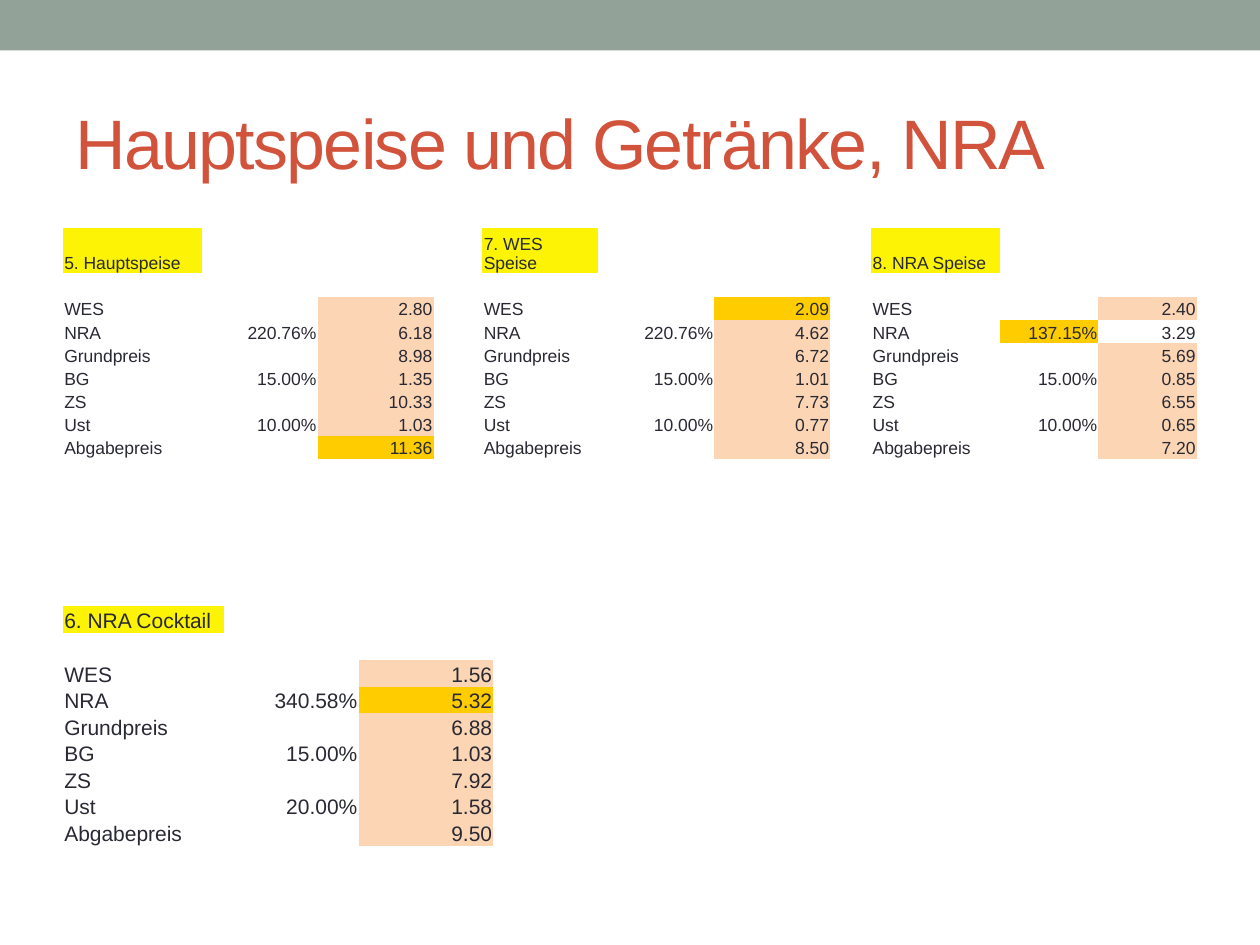
from pptx import Presentation
from pptx.dml.color import RGBColor
from pptx.enum.shapes import MSO_SHAPE
from pptx.enum.text import MSO_ANCHOR, PP_ALIGN
from pptx.util import Pt

RECTANGLE = MSO_SHAPE.RECTANGLE
BOTTOM, MIDDLE = MSO_ANCHOR.BOTTOM, MSO_ANCHOR.MIDDLE
LEFT, RIGHT = PP_ALIGN.LEFT, PP_ALIGN.RIGHT

SAGE = RGBColor(0x93, 0xA2, 0x99)
RED = RGBColor(0xD2, 0x53, 0x3C)
INK = RGBColor(0x29, 0x29, 0x34)
YELLOW = RGBColor(0xFC, 0xF3, 0x05)
PEACH = RGBColor(0xFC, 0xD5, 0xB4)
GOLD = RGBColor(0xFF, 0xCC, 0x00)

FONT = "Arial"
PLAIN_TABLE_STYLE = "{2D5ABB26-0587-4C30-8999-92F81FD0307C}"
ITEMS = ["WES", "NRA", "Grundpreis", "BG", "ZS", "Ust", "Abgabepreis"]
FIRST_ITEM_ROW = 2

# Each calculation: heading, rates by item, amounts in item order,
# the gold result cell as (item, column) and the unfilled amounts
MAIN_DISH = ("5. Hauptspeise",
             {"NRA": "220.76%", "BG": "15.00%", "Ust": "10.00%"},
             ["2.80", "6.18", "8.98", "1.35", "10.33", "1.03", "11.36"],
             ("Abgabepreis", 2), [])
WES_DISH = ("7. WES Speise",
            {"NRA": "220.76%", "BG": "15.00%", "Ust": "10.00%"},
            ["2.09", "4.62", "6.72", "1.01", "7.73", "0.77", "8.50"],
            ("WES", 2), [])
NRA_DISH = ("8. NRA Speise",
            {"NRA": "137.15%", "BG": "15.00%", "Ust": "10.00%"},
            ["2.40", "3.29", "5.69", "0.85", "6.55", "0.65", "7.20"],
            ("NRA", 1), ["NRA"])
COCKTAIL = ("6. NRA Cocktail",
            {"NRA": "340.58%", "BG": "15.00%", "Ust": "20.00%"},
            ["1.56", "5.32", "6.88", "1.03", "7.92", "1.58", "9.50"],
            ("NRA", 2), [])


def add_top_band(slide, width):
    band = slide.shapes.add_shape(RECTANGLE, 0, 0, width, Pt(28.8))
    band.shadow.inherit = False
    band.fill.solid()
    band.fill.fore_color.rgb = SAGE
    band.line.fill.background()


def set_title(slide, text):
    title = slide.shapes.title
    title.left, title.top, title.width, title.height = (
        Pt(36), Pt(41.75), Pt(648), Pt(78))
    frame = title.text_frame
    frame.text = text
    frame.word_wrap = True
    frame.vertical_anchor = MIDDLE
    paragraph = frame.paragraphs[0]
    paragraph.alignment = LEFT
    run = paragraph.runs[0]
    run.font.name, run.font.size = FONT, Pt(40)
    run.font.color.rgb = RED
    run.font._element.set("spc", "-100")


def clear_cell(cell, size):
    """Give a cell tight margins, no fill and a small empty line."""
    cell.margin_left = cell.margin_right = cell.margin_top = Pt(0.75)
    cell.margin_bottom = 0
    cell.vertical_anchor = BOTTOM
    cell.fill.background()
    end_mark = cell.text_frame.paragraphs[0]._p.get_or_add_endParaRPr()
    end_mark.set("sz", str(size * 100))


def write_cell(cell, text, size, alignment=LEFT, fill=None):
    paragraph = cell.text_frame.paragraphs[0]
    paragraph.text = text
    paragraph.alignment = alignment
    for run in paragraph.runs:
        run.font.name, run.font.size = FONT, Pt(size)
        run.font.color.rgb = INK
    if fill is not None:
        cell.fill.solid()
        cell.fill.fore_color.rgb = fill


def fill_calculation(table, first_column, calculation, size):
    heading, rates, amounts, result, unfilled = calculation
    write_cell(table.cell(0, first_column), heading, size, fill=YELLOW)
    for row, (item, amount) in enumerate(zip(ITEMS, amounts), FIRST_ITEM_ROW):
        write_cell(table.cell(row, first_column), item, size)
        if item in rates:
            rate_fill = GOLD if result == (item, 1) else None
            write_cell(table.cell(row, first_column + 1), rates[item], size,
                       RIGHT, rate_fill)
        amount_fill = GOLD if result == (item, 2) else PEACH
        if item in unfilled:
            amount_fill = None
        write_cell(table.cell(row, first_column + 2), amount, size,
                   RIGHT, amount_fill)


def add_calculations(slide, top, column_widths, row_heights, size,
                     calculations):
    """Place calculations side by side, one spacer column between them."""
    table_frame = slide.shapes.add_table(
        len(row_heights), len(column_widths), Pt(36), Pt(top),
        Pt(sum(column_widths)), Pt(sum(row_heights)))
    table = table_frame.table
    table.first_row = table.horz_banding = False
    table._tbl.tblPr.find("{*}tableStyleId").text = PLAIN_TABLE_STYLE
    for column, width in zip(table.columns, column_widths):
        column.width = Pt(width)
    for row, height in zip(table.rows, row_heights):
        row.height = Pt(height)
    for cell in table.iter_cells():
        clear_cell(cell, size)
    for index, calculation in enumerate(calculations):
        fill_calculation(table, index * 4, calculation, size)


def main():
    presentation = Presentation()
    presentation.slide_width, presentation.slide_height = Pt(720), Pt(540)
    slide = presentation.slides.add_slide(presentation.slide_layouts[5])

    add_top_band(slide, presentation.slide_width)
    set_title(slide, "Hauptspeise und Getränke, NRA")

    # Dishes
    dish_columns = [79.25, 66.25, 66.25, 28,
                    66.25, 66.25, 66.25, 23.5,
                    73.5, 56.25, 56.25]
    add_calculations(slide, 130.25, dish_columns, [26] + [13.25] * 8, 10,
                     [MAIN_DISH, WES_DISH, NRA_DISH])

    # Drinks
    add_calculations(slide, 346.25, [92, 77, 77], [15] * 9, 12, [COCKTAIL])

    presentation.save("out.pptx")


if __name__ == "__main__":
    main()
